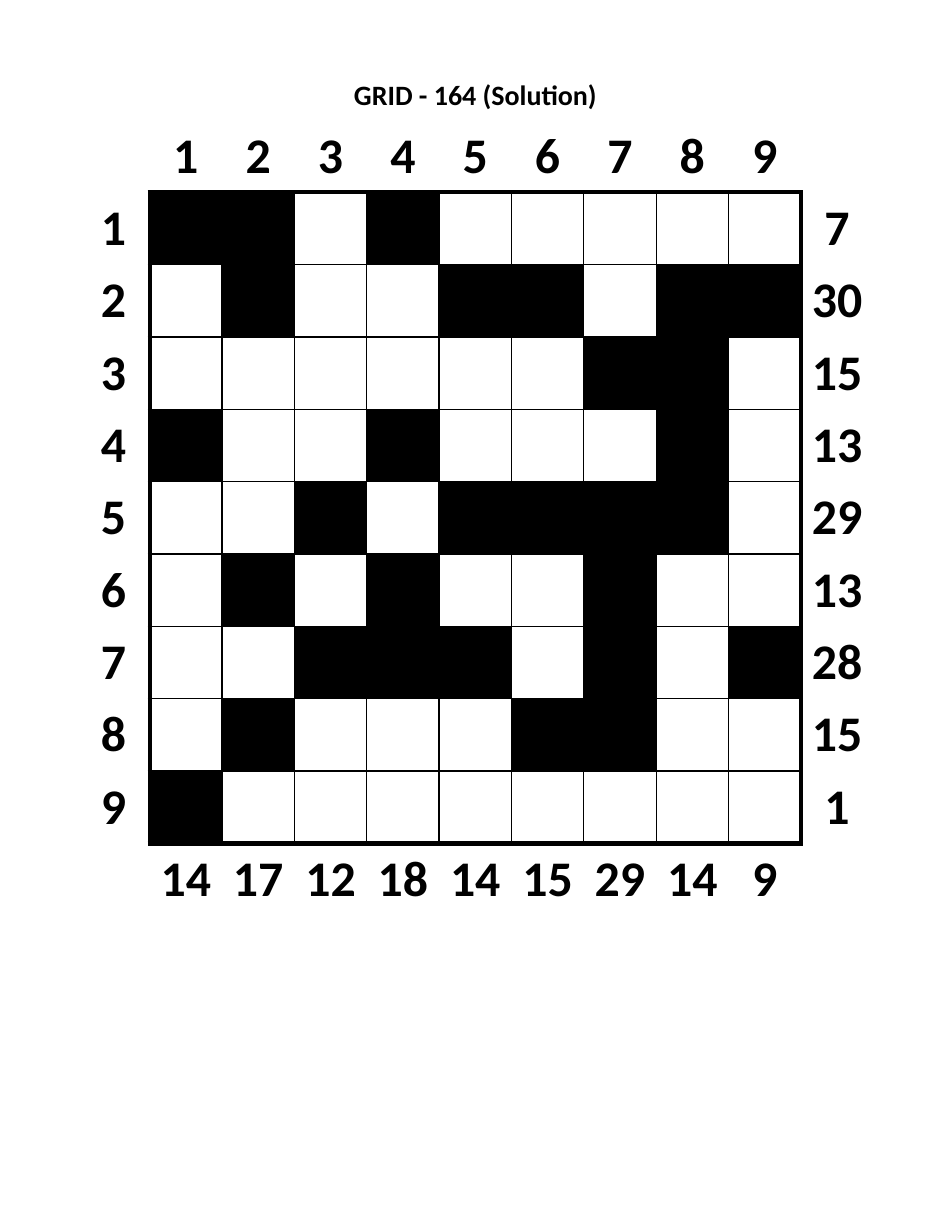
from lxml.etree import SubElement
from pptx import Presentation
from pptx.dml.color import RGBColor
from pptx.enum.text import MSO_ANCHOR, PP_ALIGN
from pptx.oxml.ns import qn
from pptx.util import Inches, Pt

BLACK, WHITE = "000000", "FFFFFF"
LEFT, WIDTH = 0.69, 7.11

# Solved puzzle: "#" marks a filled square
SOLUTION = [
    "##.#.....",
    ".#..##.##",
    "......##.",
    "#..#...#.",
    "..#.####.",
    ".#.#..#..",
    "..###.#.#",
    ".#...##..",
    "#........",
]
SIZE = len(SOLUTION)
# Neighbour offsets (row, column) in the order the border XML requires
EDGES = {"a:lnL": (0, -1), "a:lnR": (0, 1), "a:lnT": (-1, 0), "a:lnB": (1, 0)}


def color(hex_code):
    return RGBColor.from_string(hex_code)


def write(text_frame, text, size):
    paragraph = text_frame.paragraphs[0]
    paragraph.text = text
    paragraph.alignment = PP_ALIGN.CENTER
    font = paragraph.font
    font.name, font.size, font.bold = "Calibri", Pt(size), True
    font.color.rgb = color(BLACK)


def clear_margins(box):
    box.margin_left = box.margin_right = box.margin_top = box.margin_bottom = 0


def in_puzzle(row, col):
    return 1 <= row <= SIZE and 1 <= col <= SIZE


def position_sum(squares):
    """Add up the positions of the filled squares in a row or column."""
    return sum(i for i, square in enumerate(squares, 1) if square == "#")


def label(row, col):
    """Return the number in the margin around the puzzle, if any."""
    if 1 <= row <= SIZE:
        if col == 0:
            return str(row)
        if col > SIZE:
            return str(position_sum(SOLUTION[row - 1]))
    elif 1 <= col <= SIZE:
        if row == 0:
            return str(col)
        return str(position_sum(line[col - 1] for line in SOLUTION))
    return ""


def set_border(cell, tag, points):
    line = SubElement(cell._tc.get_or_add_tcPr(), qn(tag), w=str(Pt(points)))
    if points:
        fill = SubElement(line, qn("a:solidFill"))
        SubElement(fill, qn("a:srgbClr"), val=BLACK)
    else:
        SubElement(line, qn("a:noFill"))


def format_cell(cell, row, col):
    clear_margins(cell)
    cell.vertical_anchor = MSO_ANCHOR.MIDDLE
    inside = in_puzzle(row, col)
    # Thin lines between squares, a thick frame around the puzzle
    for tag, (down, right) in EDGES.items():
        inside_count = inside + in_puzzle(row + down, col + right)
        set_border(cell, tag, (0, 3, 1)[inside_count])
    filled = inside and SOLUTION[row - 1][col - 1] == "#"
    cell.fill.solid()
    cell.fill.fore_color.rgb = color(BLACK if filled else WHITE)
    number = label(row, col)
    if number:
        write(cell.text_frame, number, 32)


def add_title(slide, text):
    title = slide.shapes.add_textbox(
        Inches(LEFT), Inches(0.69), Inches(WIDTH), Inches(0.3))
    title.text_frame.word_wrap = True
    clear_margins(title.text_frame)
    write(title.text_frame, text, 18)


def add_puzzle(slide):
    count = SIZE + 2
    puzzle = slide.shapes.add_table(
        count, count, Inches(LEFT), Inches(1.07),
        Inches(WIDTH), Inches(WIDTH)).table
    puzzle.first_row = puzzle.horz_banding = False
    for track in [*puzzle.columns]:
        track.width = Inches(WIDTH / count)
    for row, track in enumerate(puzzle.rows):
        track.height = Inches(WIDTH / count)
        for col, cell in enumerate(track.cells):
            format_cell(cell, row, col)


def main():
    presentation = Presentation()
    presentation.slide_width = Inches(8.5)
    presentation.slide_height = Inches(11)
    slide = presentation.slides.add_slide(presentation.slide_layouts[6])

    add_title(slide, "GRID - 164 (Solution)")
    add_puzzle(slide)
    presentation.save("out.pptx")


if __name__ == "__main__":
    main()
